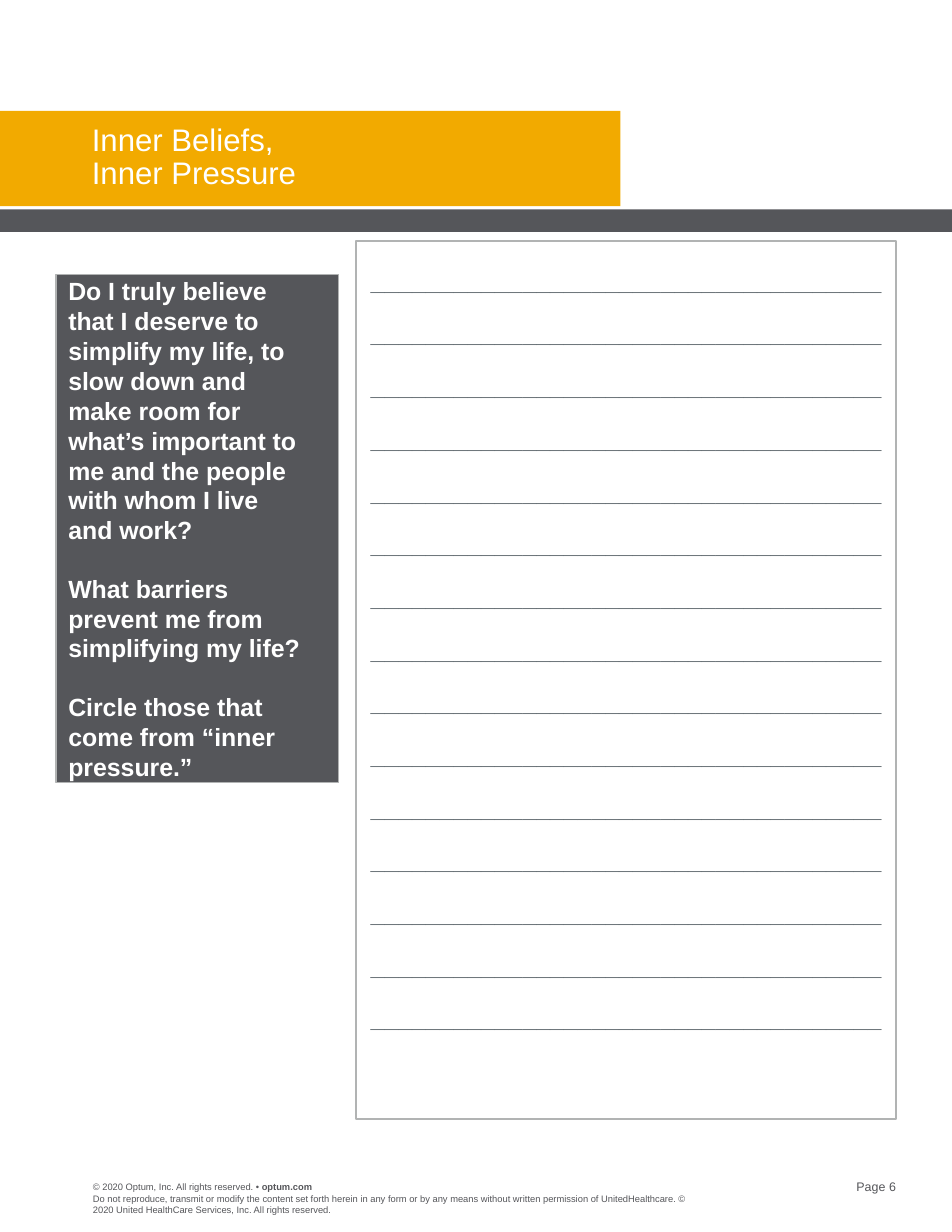
from pptx import Presentation
from pptx.dml.color import RGBColor
from pptx.enum.shapes import MSO_SHAPE as Shape
from pptx.enum.text import MSO_ANCHOR as Anchor, PP_ALIGN as Align
from pptx.util import Inches, Pt

AMBER, SLATE, WHITE = "F2AA00", "55565A", "FFFFFF"
BORDER, RULE = "B1B3B3", "646D72"

QUESTIONS = [
    "Do I truly believe that I deserve to simplify my life, to slow down and make "
    "room for what’s important to me and the people with whom I live\vand work?",
    "What barriers prevent me from simplifying my life?",
    "Circle those that come from “inner pressure.”",
]
RULE_COUNT, RULE_LENGTH = 15, 37


def color(hex_code):
    return RGBColor.from_string(hex_code)


def set_font(target, size, hex_code, bold=False):
    font = target.font
    font.name, font.size, font.bold = "Arial", Pt(size), bold
    font.color.rgb = color(hex_code)


def set_frame(frame, insets=(0, 0, 0, 0), anchor=Anchor.TOP):
    frame.word_wrap = True
    frame.vertical_anchor = anchor
    (frame.margin_left, frame.margin_top,
     frame.margin_right, frame.margin_bottom) = map(Inches, insets)


def add_box(slide, box, fill=None, line=None, line_width=1):
    rect = slide.shapes.add_shape(Shape.RECTANGLE, *map(Inches, box))
    rect.shadow.inherit = False
    if fill:
        rect.fill.solid()
        rect.fill.fore_color.rgb = color(fill)
    else:
        rect.fill.background()
    if line:
        rect.line.color.rgb = color(line)
        rect.line.width = Pt(line_width)
    else:
        rect.line.fill.background()
    return rect


def add_label(slide, box, size, *parts, align=Align.LEFT):
    """Place one line of (text, bold) parts."""
    frame = slide.shapes.add_textbox(*map(Inches, box)).text_frame
    set_frame(frame)
    paragraph = frame.paragraphs[0]
    paragraph.alignment = align
    for text, bold in parts:
        run = paragraph.add_run()
        run.text = text
        set_font(run, size, SLATE, bold)


def fill_paragraphs(frame, texts, hex_code, align, before, after):
    for index, text in enumerate(texts):
        paragraph = frame.add_paragraph() if index else frame.paragraphs[0]
        paragraph.text = text
        paragraph.alignment = align
        paragraph.space_before = Pt(before if index else 0)
        paragraph.space_after = Pt(after)
        set_font(paragraph, 16, hex_code, bold=True)


def add_header(slide, box):
    left, top, width, height = box
    add_box(slide, (left, top, 5.54, 0.85), AMBER)
    add_box(slide, (left, top + height - 0.2, width, 0.2), SLATE)

    title = slide.shapes.title
    title.left, title.top = Inches(left + 0.82), Inches(top + 0.12)
    title.width, title.height = Inches(4.5), Inches(0.61)
    set_frame(title.text_frame)
    title.text_frame.text = "Inner Beliefs, \vInner Pressure"
    heading = title.text_frame.paragraphs[0]
    heading.alignment = Align.LEFT
    heading.line_spacing = 0.9
    set_font(heading, 20, WHITE)
    # Bring the title in front of its band
    slide.shapes.element.append(title.element)


def add_questions(slide, box):
    frame = add_box(slide, box, SLATE, BORDER, 0.75).text_frame
    set_frame(frame, (0.11, 0, 0.22, 0), Anchor.MIDDLE)
    fill_paragraphs(frame, QUESTIONS, WHITE, Align.LEFT, 5, 13.4)


def add_writing_area(slide, box):
    frame = add_box(slide, box, line=BORDER).text_frame
    set_frame(frame, (0.11, 0.22, 0.11, 0))
    rules = ["_" * RULE_LENGTH] * RULE_COUNT
    fill_paragraphs(frame, rules, RULE, Align.CENTER, 8, 6.7)


def add_footer(slide, box):
    left, top, width, height = box
    add_label(slide, (left, top, 2.5, 0.1), 6,
              ("© 2020 Optum, Inc. All rights reserved. • ", False),
              ("optum.com", True))
    add_label(slide, (left, top + 0.1, 5.3, height - 0.1), 6,
              ("Do not reproduce, transmit or modify the content set forth herein in any "
               "form or by any means without written permission of UnitedHealthcare. © "
               "2020 United HealthCare Services, Inc. All rights reserved.", False))
    add_label(slide, (left + width - 0.81, top - 0.02, 0.81, 0.13), 8,
              ("Page 6", False), align=Align.RIGHT)


def main():
    deck = Presentation()
    deck.slide_width, deck.slide_height = Inches(8.5), Inches(11)
    slide = deck.slides.add_slide(deck.slide_layouts.get_by_name("Title Only"))
    add_header(slide, (0, 0.99, 8.5, 1.08))
    add_questions(slide, (0.5, 2.45, 2.52, 4.54))
    add_writing_area(slide, (3.18, 2.15, 4.82, 7.84))
    add_footer(slide, (0.83, 10.55, 7.17, 0.3))
    deck.save("out.pptx")


if __name__ == "__main__":
    main()
